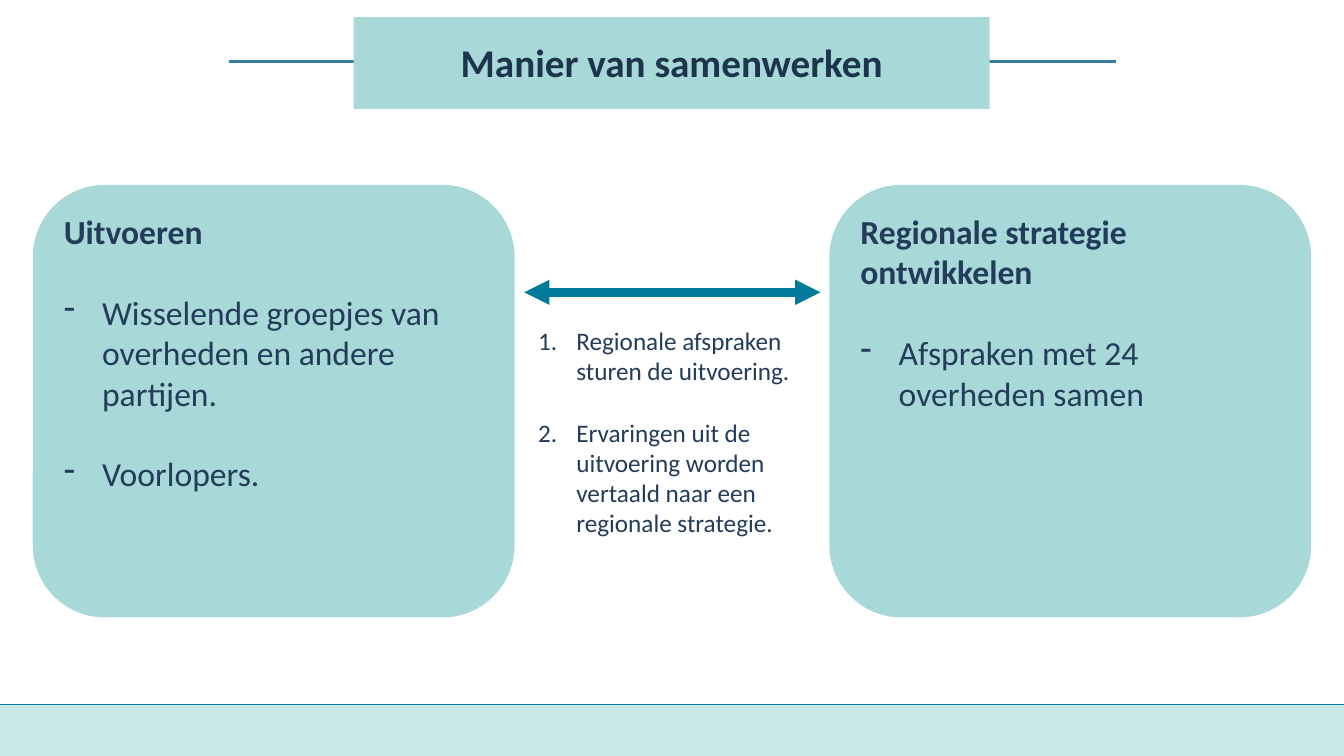
import pptx
import pptx.dml.color
import pptx.enum.shapes
import pptx.enum.text
import pptx.oxml.ns
import pptx.util
from lxml import etree

COLUMNS, ROWS = 160, 90
CELL = pptx.util.Inches(1) / 12
FONT = "Calibri"
INK, TITLE_INK = "233C59", "1D344D"
AQUA, PALE_AQUA, TEAL, STEEL = "A8D8D8", "CBE8E8", "007B9B", "387B9A"
CARD_MARGIN, CARD_TOP, CARD_WIDTH, CARD_HEIGHT = 3.9, 22, 57.36, 51.5
DASH = ("a:buChar", {"char": "-"})
NUMBER = ("a:buAutoNum", {"type": "arabicPeriod"})


def grid(cells):
    """Turn a number of grid cells into a length."""
    return pptx.util.Emu(round(cells * CELL))


def color(value):
    """Turn a hex string into a colour."""
    return pptx.dml.color.RGBColor.from_string(value)


def add_box(slide, kind, left, top, width, height, fill):
    """Add a flat filled shape whose text starts at the top."""
    shape = slide.shapes.add_shape(kind, *map(grid, (left, top, width, height)))
    shape.shadow.inherit = False
    shape.fill.solid()
    shape.fill.fore_color.rgb = color(fill)
    shape.line.fill.background()
    shape.text_frame.word_wrap = True
    shape.text_frame.vertical_anchor = pptx.enum.text.MSO_ANCHOR.TOP
    return shape


def add_line(slide, start, end, row, stroke, width, arrows=False):
    """Add a horizontal line, with arrowheads at both ends if wanted."""
    line = slide.shapes.add_connector(
        pptx.enum.shapes.MSO_CONNECTOR.STRAIGHT, *map(grid, (start, row, end, row)))
    line.line.color.rgb = color(stroke)
    line.line.width = pptx.util.Pt(width)
    if arrows:
        outline = line.line._get_or_add_ln()
        for tag in ("a:headEnd", "a:tailEnd"):
            etree.SubElement(outline, pptx.oxml.ns.qn(tag), type="triangle")
    etree.SubElement(line._element.spPr, pptx.oxml.ns.qn("a:effectLst"))


def add_paragraph(frame, text, size, ink=INK, bold=False, bullet=None, space=0):
    """Write the next paragraph of a frame, with a hanging bullet if wanted."""
    first = not frame.paragraphs[0].runs
    paragraph = frame.paragraphs[0] if first else frame.add_paragraph()
    paragraph.alignment = pptx.enum.text.PP_ALIGN.LEFT
    if bullet:
        tag, attributes = bullet
        indent = pptx.util.Inches(0.38)
        properties = paragraph._p.get_or_add_pPr()
        properties.set("marL", str(indent))
        properties.set("indent", str(-indent))
        etree.SubElement(properties, pptx.oxml.ns.qn(tag), attributes)
    if not first:
        paragraph.space_before = pptx.util.Pt(space)
    run = paragraph.add_run()
    run.text = text
    run.font.name = FONT
    run.font.size = pptx.util.Pt(size)
    run.font.bold = bold
    run.font.color.rgb = color(ink)
    return paragraph


def add_title(slide, text):
    """Add the centred title band."""
    shape = add_box(slide, pptx.enum.shapes.MSO_SHAPE.RECTANGLE,
                    42.1, 2.04, 75.72, 10.92, AQUA)
    frame = shape.text_frame
    frame.margin_left = frame.margin_right = frame.margin_bottom = 0
    frame.margin_top = pptx.util.Inches(0.03)
    frame.vertical_anchor = pptx.enum.text.MSO_ANCHOR.MIDDLE
    paragraph = add_paragraph(frame, text, 28, TITLE_INK, bold=True)
    paragraph.alignment = pptx.enum.text.PP_ALIGN.CENTER
    paragraph.line_spacing = 0.9


def add_card(slide, left, heading, points):
    """Add a rounded card with a heading and dashed points."""
    shape = add_box(slide, pptx.enum.shapes.MSO_SHAPE.ROUNDED_RECTANGLE,
                    left, CARD_TOP, CARD_WIDTH, CARD_HEIGHT, AQUA)
    add_paragraph(shape.text_frame, heading, 24, bold=True)
    for point in points:
        add_paragraph(shape.text_frame, point, 24, bullet=DASH, space=29)


def add_notes(slide, points):
    """Add the numbered list below the arrow."""
    shape = add_box(slide, pptx.enum.shapes.MSO_SHAPE.RECTANGLE,
                    62.88, 27.12, 35.28, 37.56, "FFFFFF")
    shape.text_frame.margin_top = pptx.util.Inches(0.97)
    for point in points:
        add_paragraph(shape.text_frame, point, 18, bullet=NUMBER, space=22)


def main():
    """Build and save the slide."""
    presentation = pptx.Presentation()
    presentation.slide_width, presentation.slide_height = grid(COLUMNS), grid(ROWS)
    slide = presentation.slides.add_slide(presentation.slide_layouts[6])
    add_box(slide, pptx.enum.shapes.MSO_SHAPE.RECTANGLE,
            0, 83.88, COLUMNS, 6.12, PALE_AQUA)
    add_line(slide, 27.24, 132.84, 7.32, STEEL, 2.25)
    add_line(slide, 0, COLUMNS, 83.88, TEAL, 1)
    add_title(slide, "Manier van samenwerken")
    add_card(slide, CARD_MARGIN, "Uitvoeren",
             ["Wisselende groepjes van overheden en andere partijen.", "Voorlopers."])
    add_card(slide, COLUMNS - CARD_MARGIN - CARD_WIDTH,
             "Regionale strategie ontwikkelen", ["Afspraken met 24 overheden samen"])
    add_notes(slide, [
        "Regionale afspraken sturen de uitvoering.",
        "Ervaringen uit de uitvoering worden vertaald naar een regionale strategie."])
    add_line(slide, 62.4, 97.68, 34.8, TEAL, 6, arrows=True)
    presentation.save("out.pptx")


if __name__ == "__main__":
    main()
